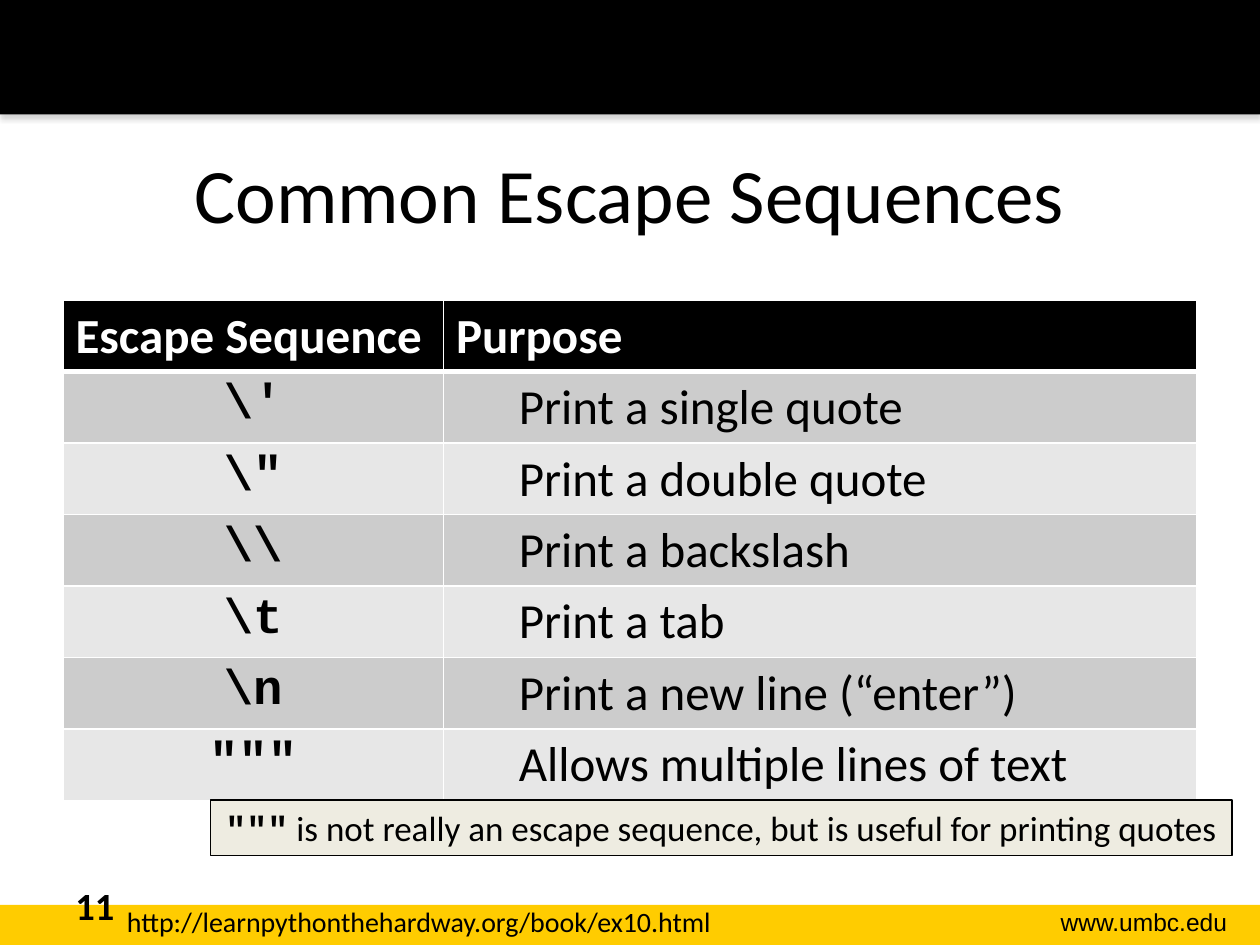
import dataclasses

import lxml.etree
import pptx
import pptx.dml.color
import pptx.enum.shapes
import pptx.enum.text
import pptx.oxml
import pptx.oxml.ns
import pptx.util

Cm = pptx.util.Cm
Pt = pptx.util.Pt
ALIGN = pptx.enum.text.PP_ALIGN
ANCHOR = pptx.enum.text.MSO_ANCHOR
qn = pptx.oxml.ns.qn


@dataclasses.dataclass(frozen=True)
class Theme:
    body_font: str = "Calibri"
    code_font: str = "Courier New"
    site_font: str = "Arial"
    black: str = "000000"
    white: str = "FFFFFF"
    gold: str = "FFCC00"
    cream: str = "EEECE1"
    shadow: str = "808080"
    bands: tuple = ("CCCCCC", "E7E7E7")
    title_size: int = 44
    table_size: int = 28
    number_size: int = 22
    note_size: int = 20
    source_size: int = 16
    site_size: int = 14


THEME = Theme()

HEADINGS = ("Escape Sequence", "Purpose")
SEQUENCES = (
    ("\\'", "Print a single quote"),
    ('\\"', "Print a double quote"),
    ("\\\\", "Print a backslash"),
    ("\\t", "Print a tab"),
    ("\\n", "Print a new line (“enter”)"),
    ('"""', "Allows multiple lines of text"),
)


def rgb(color):
    return pptx.dml.color.RGBColor.from_string(color)


def add_run(paragraph, text, size, font=THEME.body_font, bold=False, color=THEME.black):
    run = paragraph.add_run()
    run.text = text
    run.font.name = font
    run.font.size = Pt(size)
    run.font.bold = bold
    run.font.color.rgb = rgb(color)


def add_rectangle(slide, left, top, width, height, fill):
    shape = slide.shapes.add_shape(
        pptx.enum.shapes.MSO_SHAPE.RECTANGLE, Cm(left), Cm(top), Cm(width), Cm(height)
    )
    shape.shadow.inherit = False
    shape.fill.solid()
    shape.fill.fore_color.rgb = rgb(fill)
    shape.line.fill.background()
    return shape


def add_drop_shadow(shape):
    """Cast a soft shadow straight down from the shape."""
    effects = shape._element.spPr.find(qn("a:effectLst"))
    shadow = lxml.etree.SubElement(
        effects, qn("a:outerShdw"), blurRad=str(Pt(3.1)), dist=str(Pt(1.8)),
        dir="5400000", rotWithShape="0",
    )
    color = lxml.etree.SubElement(shadow, qn("a:srgbClr"), val=THEME.shadow)
    lxml.etree.SubElement(color, qn("a:alpha"), val="35000")


def add_label(slide, left, top, width, height, text, size,
              align=ALIGN.LEFT, anchor=ANCHOR.TOP, wrap=True, **style):
    box = slide.shapes.add_textbox(Cm(left), Cm(top), Cm(width), Cm(height))
    frame = box.text_frame
    frame.word_wrap = wrap
    frame.vertical_anchor = anchor
    paragraph = frame.paragraphs[0]
    paragraph.alignment = align
    add_run(paragraph, text, size, **style)


def set_borders(cell, bottom_width):
    properties = cell._tc.get_or_add_tcPr()
    for side, width in (("L", 1), ("R", 1), ("T", 1), ("B", bottom_width)):
        line = lxml.etree.SubElement(properties, qn(f"a:ln{side}"), w=str(Pt(width)))
        fill = lxml.etree.SubElement(line, qn("a:solidFill"))
        lxml.etree.SubElement(fill, qn("a:srgbClr"), val=THEME.white)


def fill_cell(cell, text, fill, align=ALIGN.LEFT, bottom_width=1, **style):
    set_borders(cell, bottom_width)
    cell.fill.solid()
    cell.fill.fore_color.rgb = rgb(fill)
    paragraph = cell.text_frame.paragraphs[0]
    paragraph.alignment = align
    add_run(paragraph, text, THEME.table_size, **style)


def add_sequence_table(slide):
    row_count = len(SEQUENCES) + 1
    row_height = Cm(1.44)
    table = slide.shapes.add_table(
        row_count, 2, Cm(1.27), Cm(6.05), Cm(22.86), row_height * row_count
    ).table
    for column, width in zip(table.columns, (7.67, 15.19)):
        column.width = Cm(width)
    for row in table.rows:
        row.height = row_height

    for index, heading in enumerate(HEADINGS):
        fill_cell(table.cell(0, index), heading, THEME.black,
                  bottom_width=3, bold=True, color=THEME.white)
    for index, (sequence, purpose) in enumerate(SEQUENCES):
        band = THEME.bands[index % 2]
        top_width = 3 if index == 0 else 1
        sequence_cell, purpose_cell = table.cell(index + 1, 0), table.cell(index + 1, 1)
        fill_cell(sequence_cell, sequence, band, ALIGN.CENTER,
                  font=THEME.code_font, bold=True)
        fill_cell(purpose_cell, purpose, band)
        purpose_cell.margin_left = Cm(1.52)
        for cell in (sequence_cell, purpose_cell):
            cell._tc.tcPr.find(qn("a:lnT")).set("w", str(Pt(top_width)))


def add_note(slide):
    note = add_rectangle(slide, 4.24, 16.13, 20.6, 1.12, THEME.cream)
    note.line.color.rgb = rgb(THEME.black)
    note.line.width = Pt(0.75)
    frame = note.text_frame
    frame.word_wrap = True
    frame.vertical_anchor = ANCHOR.TOP
    paragraph = frame.paragraphs[0]
    paragraph.alignment = ALIGN.CENTER
    add_run(paragraph, '"""', THEME.note_size, font=THEME.code_font, bold=True)
    add_run(paragraph, " is not really an escape sequence, but is useful for printing quotes",
            THEME.note_size)


def main():
    presentation = pptx.Presentation()
    presentation.slide_width = Cm(25.4)
    presentation.slide_height = Cm(19.05)
    slide = presentation.slides.add_slide(presentation.slide_layouts[6])

    add_rectangle(slide, 0, 18.24, 25.4, 0.81, THEME.gold)
    add_drop_shadow(add_rectangle(slide, 0, 0, 25.4, 2.31, THEME.black))
    add_label(slide, 19.94, 18.16, 5.05, 0.86, "www.umbc.edu", THEME.site_size,
              align=ALIGN.RIGHT, font=THEME.site_font)
    add_label(slide, 1.27, 2.29, 22.86, 3.18, "Common Escape Sequences", THEME.title_size,
              align=ALIGN.CENTER, anchor=ANCHOR.MIDDLE)
    add_label(slide, 1.27, 17.65, 5.92, 1.02, "11", THEME.number_size, bold=True)
    add_label(slide, 2.31, 18.11, 12.73, 0.94,
              "http://learnpythonthehardway.org/book/ex10.html", THEME.source_size, wrap=False)
    add_sequence_table(slide)
    add_note(slide)

    presentation.save("out.pptx")


if __name__ == "__main__":
    main()
